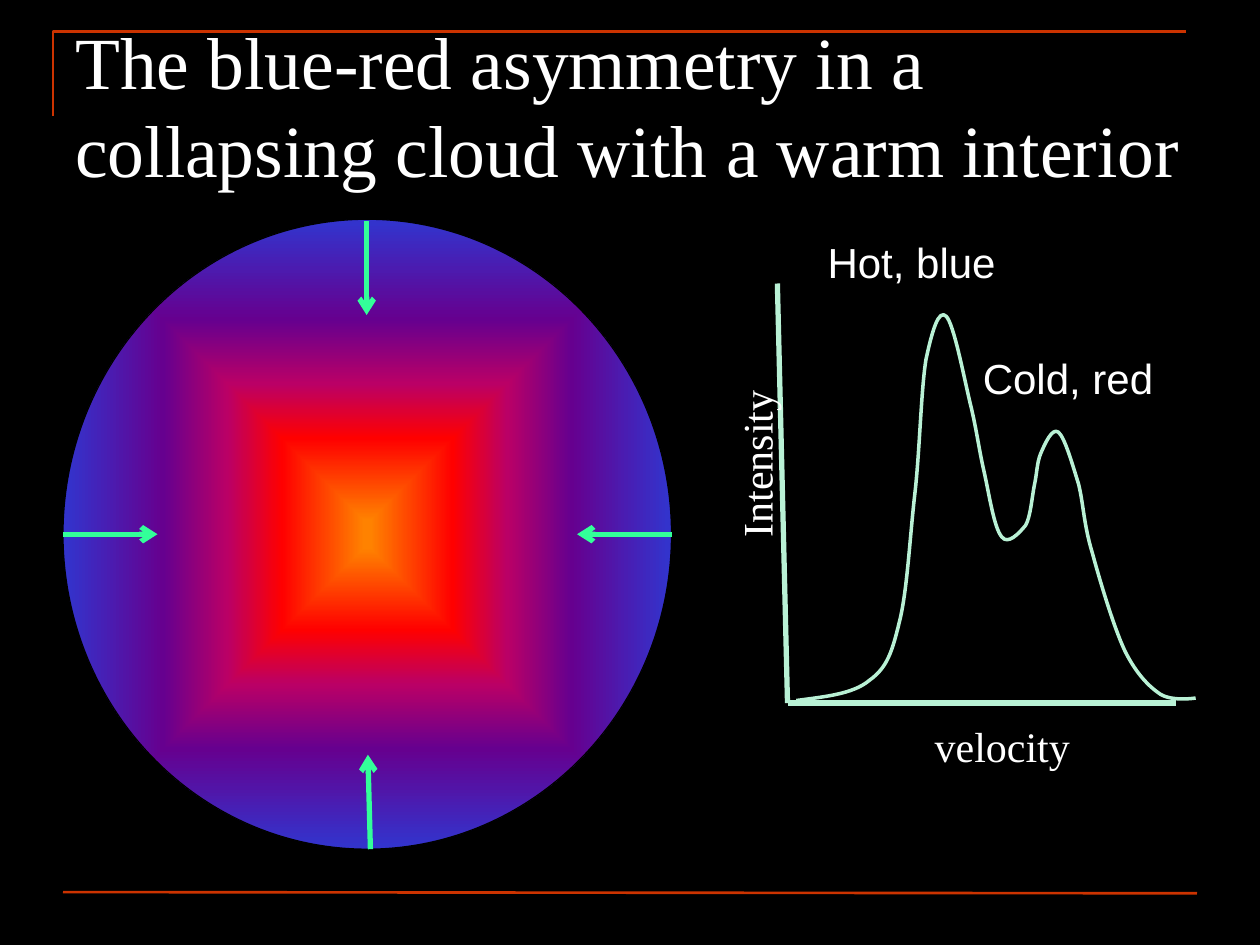
from lxml import etree
from pptx import Presentation
from pptx import util as u
from pptx.dml.color import RGBColor
from pptx.enum import shapes, text
from pptx.oxml.ns import qn

BLACK = RGBColor(0x00, 0x00, 0x00)
WHITE = RGBColor(0xFF, 0xFF, 0xFF)
RUST = RGBColor(0xCC, 0x33, 0x00)
MINT = RGBColor(0xB9, 0xF1, 0xD5)
GREEN = RGBColor(0x33, 0xFF, 0x99)
HEAT = [(1, "FF8200"), (28, "FF0000"), (46, "BA0066"), (67, "66008F"), (99, "3333CC")]

# Line profile: a start point, then two handles and an end point per segment
PROFILE = [
    (6.32, 5.56),
    (6.54, 5.53), (6.77, 5.51), (6.9, 5.4),
    (7.04, 5.3), (7.08, 5.18), (7.14, 4.93),
    (7.2, 4.69), (7.22, 4.28), (7.26, 3.93),
    (7.3, 3.59), (7.31, 3.09), (7.35, 2.85),
    (7.4, 2.62), (7.45, 2.45), (7.51, 2.51),
    (7.57, 2.57), (7.65, 2.99), (7.7, 3.2),
    (7.75, 3.4), (7.77, 3.57), (7.81, 3.74),
    (7.85, 3.92), (7.89, 4.19), (7.95, 4.26),
    (8, 4.33), (8.09, 4.23), (8.14, 4.17),
    (8.18, 4.1), (8.19, 3.95), (8.21, 3.85),
    (8.23, 3.76), (8.23, 3.67), (8.26, 3.6),
    (8.29, 3.53), (8.35, 3.39), (8.4, 3.43),
    (8.45, 3.47), (8.51, 3.68), (8.56, 3.84),
    (8.6, 4), (8.6, 4.16), (8.67, 4.39),
    (8.73, 4.61), (8.84, 4.98), (8.93, 5.17),
    (9.02, 5.35), (9.12, 5.45), (9.21, 5.51),
    (9.31, 5.57), (9.49, 5.54), (9.49, 5.54),
]


class Painter:
    font_size = 24
    serif = "Times New Roman"
    sans = "Arial"

    def __init__(self, page):
        self.page = page

    def apply(self, target, values):
        for name, value in values.items():
            setattr(target, name, value)

    def stroke(self, item, color, width):
        item.line.color.rgb = color
        item.line.width = u.Pt(width)

    def line(self, start, end, color, width, arrow=False):
        link = self.page.shapes.add_connector(
            shapes.MSO_CONNECTOR.STRAIGHT, *map(u.Inches, start + end))
        self.stroke(link, color, width)
        etree.SubElement(link._element.spPr, qn("a:effectLst"))
        if arrow:
            etree.SubElement(link.line._get_or_add_ln(), qn("a:tailEnd"), type="arrow")

    def outline(self, points, color, width):
        corners = [tuple(map(u.Inches, point)) for point in points]
        builder = self.page.shapes.build_freeform(*corners[0])
        builder.add_line_segments(corners[1:], close=False)
        shape = builder.convert_to_shape()
        shape.fill.background()
        shape.shadow.inherit = False
        self.stroke(shape, color, width)
        return shape

    def curve(self, nodes, color, width):
        """Outline through every third node, bent by the handles between."""
        shape = self.outline(nodes[::3], color, width)
        segments = list(shape._element.spPr.iter(qn("a:lnTo")))
        for index, segment in enumerate(segments):
            segment.tag = qn("a:cubicBezTo")
            handles = nodes[3 * index + 1:3 * index + 3]
            for place, (x, y) in enumerate(handles):
                handle = etree.Element(qn("a:pt"), x=str(u.Inches(x) - shape.left),
                                       y=str(u.Inches(y) - shape.top))
                segment.insert(place, handle)

    def label(self, words, at, font=serif, size=font_size, rotation=0,
              align=text.PP_ALIGN.RIGHT):
        box = self.page.shapes.add_textbox(*map(u.Inches, at))
        box.rotation = rotation
        self.apply(box.text_frame, {
            "word_wrap": True, "vertical_anchor": text.MSO_ANCHOR.TOP})
        para = box.text_frame.paragraphs[0]
        para.alignment = align
        span = para.add_run()
        span.text = words
        self.apply(span.font, {"name": font, "size": u.Pt(size)})
        span.font.color.rgb = WHITE

    def cloud(self, at, stops):
        shape = self.page.shapes.add_shape(
            shapes.MSO_SHAPE.OVAL, *map(u.Inches, at))
        shape.shadow.inherit = False
        self.stroke(shape, BLACK, 0.75)
        shape.fill.gradient()
        grad = shape._element.spPr.find(qn("a:gradFill"))
        for child in list(grad):
            grad.remove(child)
        stop_list = etree.SubElement(grad, qn("a:gsLst"))
        for percent, color in stops:
            stop = etree.SubElement(stop_list, qn("a:gs"), pos=str(percent * 1000))
            etree.SubElement(stop, qn("a:srgbClr"), val=color)
        center = etree.SubElement(grad, qn("a:path"), attrib={"path": "shape"})
        etree.SubElement(center, qn("a:fillToRect"),
                         attrib={side: "50000" for side in "ltrb"})


def main():
    deck = Presentation()
    deck.slide_width, deck.slide_height = u.Inches(10), u.Inches(7.5)
    page = deck.slides.add_slide(deck.slide_layouts[6])
    page.background.fill.solid()
    page.background.fill.fore_color.rgb = BLACK
    painter = Painter(page)

    # Frame and title
    painter.outline([(0.42, 0.92), (0.42, 0.25), (9.41, 0.25)], RUST, 1.5)
    painter.line((0.5, 7.08), (9.5, 7.09), RUST, 1.5)
    painter.label("The blue-red asymmetry in a collapsing cloud with a warm interior",
                  (0.5, 0.08, 9, 1.24), size=42, align=text.PP_ALIGN.LEFT)

    # Spectrum: axes, profile and labels
    origin = (6.25, 5.58)
    painter.line((6.17, 2.25), origin, MINT, 3)
    painter.line((9.33, 5.58), origin, MINT, 3)
    painter.curve(PROFILE, MINT, 2)
    for words, left, top, font, rotation in [
            ("velocity", 6.67, 5.67, painter.serif, 0),
            ("Intensity", 5.04, 3.71, painter.serif, 270),
            ("Hot, blue", 6.08, 1.83, painter.sans, 0),
            ("Cold, red", 7.33, 2.75, painter.sans, 0)]:
        painter.label(words, (left, top, 1.92, 0.5), font, rotation=rotation)

    # Collapsing cloud with infall arrows
    painter.cloud((0.5, 1.74, 4.83, 5), HEAT)
    for start, end in [((0.5, 4.24), (1.25, 4.24)), ((5.33, 4.24), (4.58, 4.24)),
                       ((2.91, 1.75), (2.91, 2.5)), ((2.94, 6.74), (2.92, 5.99))]:
        painter.line(start, end, GREEN, 3, arrow=True)

    deck.save("out.pptx")


if __name__ == "__main__":
    main()
